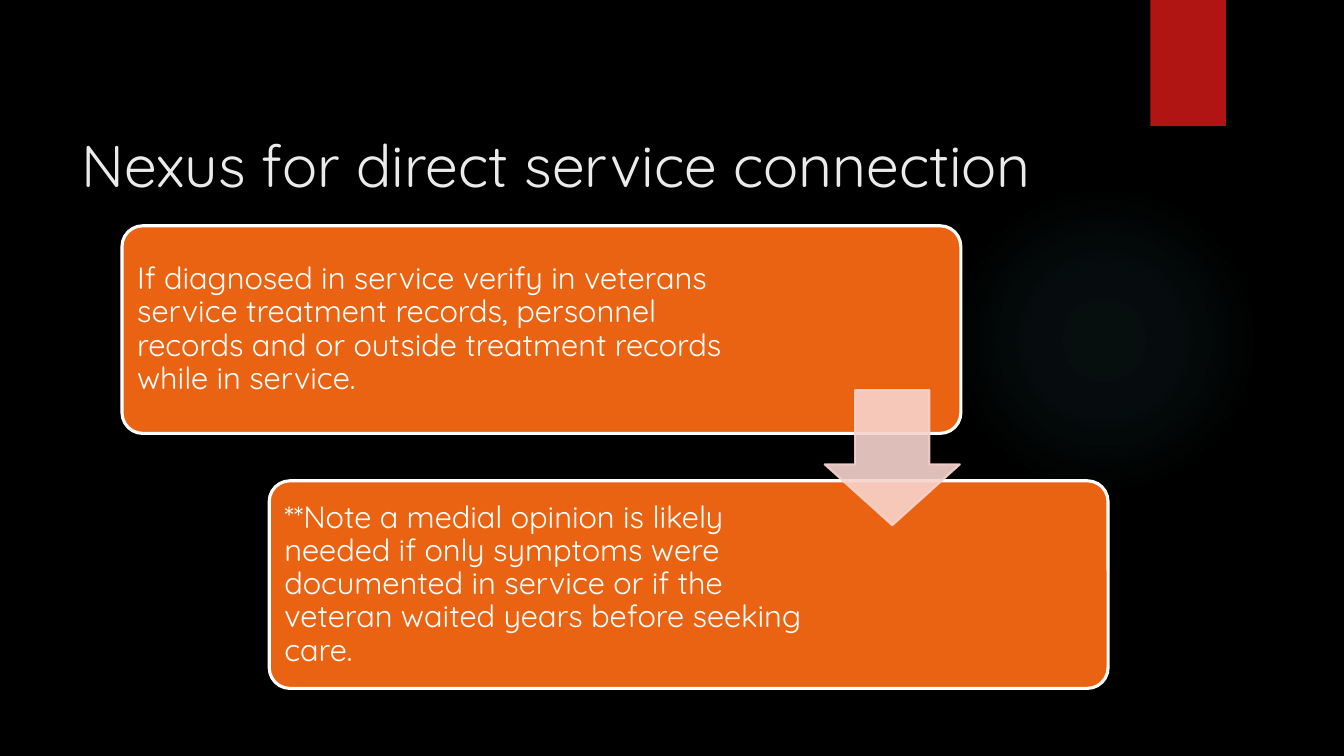
"""Build the slide on nexus for direct service connection."""
from dataclasses import dataclass
from typing import Any

from lxml import etree
from pptx import Presentation, util as u
from pptx.dml.color import RGBColor
from pptx.enum import shapes, text
from pptx.oxml import ns, parse_xml


@dataclass(frozen=True)
class Theme:
    """Colours, type sizes and font of the slide."""
    back: str = "000000"
    glow: str = "50B9C1"
    tab: str = "B01513"
    card: str = "EA6312"
    edge: str = "FFFFFF"
    arrow: str = "F7D3CC"
    head: str = "EBEBEB"
    body: str = "FFFFFF"
    font: str = "Quicksand"
    big: float = 42
    small: float = 22


@dataclass(frozen=True)
class Box:
    """A place on the slide in inches."""
    left: float
    top: float
    width: float
    height: float

    def emu(self) -> list[int]:
        """Give left, top, width and height as lengths."""
        return [u.Inches(n) for n in (self.left, self.top, self.width, self.height)]


@dataclass(frozen=True)
class Card:
    """A rounded card with its corner, text width and words."""
    left: float
    top: float
    span: float
    words: str


THEME = Theme()
KIND = shapes.MSO_SHAPE
CARDS = [
    Card(1.21, 2.24, 6.18, "If diagnosed in service verify in veterans service treatment "
         "records, personnel records and or outside treatment records while in service."),
    Card(2.67, 4.77, 5.39, "**Note a medial opinion is likely needed if only symptoms were "
         "documented in service or if the veteran waited years before seeking care."),
]


def apply(target: Any, style: dict[str, Any]) -> None:
    """Set each attribute in the style on the target."""
    for name, value in style.items():
        setattr(target, name, value)


def paint(fill: Any, color: str) -> None:
    """Give a fill one solid colour."""
    fill.solid()
    fill.fore_color.rgb = RGBColor.from_string(color)


def draw(slide: Any, kind: Any, box: Box, color: str, edge: str = "",
         weight: float = 0, bends: tuple[float, ...] = ()) -> Any:
    """Add a flat shape with a fill and an optional outline."""
    shape = slide.shapes.add_shape(kind, *box.emu())
    shape.shadow.inherit = False
    paint(shape.fill, color)
    if edge:
        paint(shape.line.fill, edge)
        shape.line.width = u.Pt(weight)
    else:
        shape.line.fill.background()
    for spot, bend in enumerate(bends):
        shape.adjustments[spot] = bend
    return shape


def fade(shape: Any, alpha: int) -> None:
    """Make the fill and outline of a shape partly clear."""
    for color in shape.element.spPr.iter(ns.qn("a:srgbClr")):
        etree.SubElement(color, ns.qn("a:alpha"), val=str(alpha * 1000))


def shine(shape: Any, color: str, stops: list[tuple[int, int]]) -> None:
    """Swap a solid fill for a round glow of (place, alpha) stops."""
    marks = "".join(
        f'<a:gs pos="{place * 1000}"><a:srgbClr val="{color}">'
        f'<a:alpha val="{alpha * 1000}"/></a:srgbClr></a:gs>' for place, alpha in stops)
    solid = shape.element.spPr.find(ns.qn("a:solidFill"))
    solid.getparent().replace(solid, parse_xml(
        f'<a:gradFill {ns.nsdecls("a")}><a:gsLst>{marks}</a:gsLst><a:path path="circle">'
        '<a:fillToRect l="50000" t="50000" r="50000" b="50000"/></a:path></a:gradFill>'))


def write(slide: Any, box: Box, words: str, size: float, color: str,
          frame: dict[str, Any], para: dict[str, Any]) -> None:
    """Add a wrapped text box with one paragraph."""
    area = slide.shapes.add_textbox(*box.emu()).text_frame
    apply(area, {"word_wrap": True, **frame})
    line = area.paragraphs[0]
    apply(line, para)
    run = line.add_run()
    run.text = words
    apply(run.font, {"name": THEME.font, "size": u.Pt(size)})
    run.font.color.rgb = RGBColor.from_string(color)


def main() -> None:
    """Draw the slide and save it."""
    deck = Presentation()
    apply(deck, {"slide_width": u.Inches(13.33), "slide_height": u.Inches(7.5)})
    slide = deck.slides.add_slide(deck.slide_layouts[6])
    paint(slide.background.fill, THEME.back)

    glow = draw(slide, KIND.OVAL, Box(9.41, 1.83, 3.08, 3.08), THEME.glow)
    shine(glow, THEME.glow, [(0, 7), (36, 6), (69, 0)])
    draw(slide, KIND.RECTANGLE, Box(11.41, 0, 0.75, 1.25), THEME.tab)
    write(slide, Box(0.71, 0.5, 10.29, 1.53), "Nexus for direct service connection",
          THEME.big, THEME.head, {"vertical_anchor": text.MSO_ANCHOR.BOTTOM}, {})

    sides = ("left", "right", "top", "bottom")
    frame = {"vertical_anchor": text.MSO_ANCHOR.MIDDLE,
             **{f"margin_{side}": u.Inches(0.09) for side in sides}}
    for card in CARDS:
        draw(slide, KIND.ROUNDED_RECTANGLE, Box(card.left, card.top, 8.32, 2.06),
             THEME.card, THEME.edge, 2.25, (0.1,))
        write(slide, Box(card.left + 0.06, card.top + 0.06, card.span, 1.94),
              card.words, THEME.small, THEME.body, frame, {"line_spacing": 0.9})

    arrow = draw(slide, KIND.DOWN_ARROW, Box(8.18, 3.87, 1.34, 1.34),
                 THEME.arrow, THEME.arrow, 1.5, (0.55, 0.45))
    fade(arrow, 90)
    deck.save("out.pptx")


if __name__ == "__main__":
    main()
